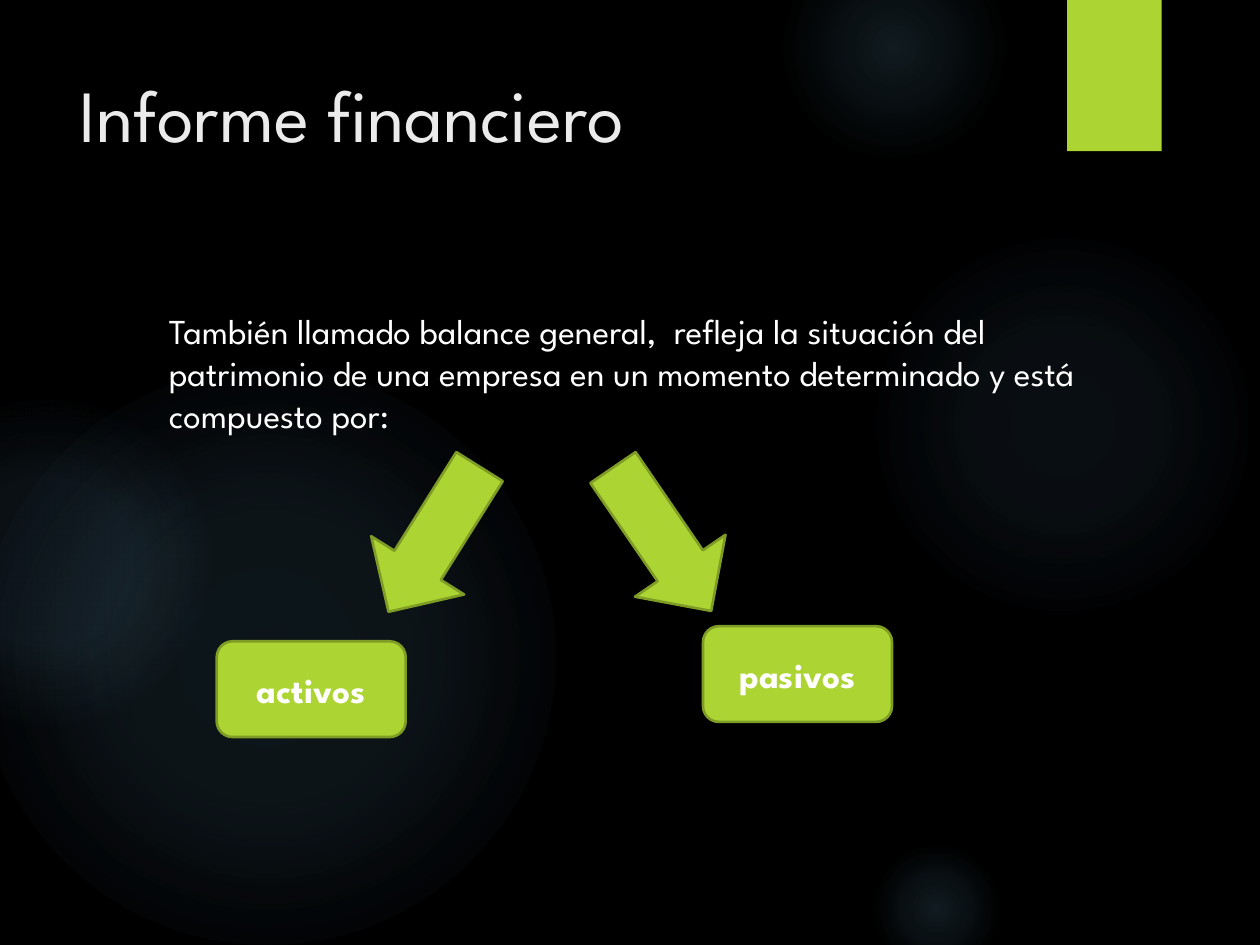
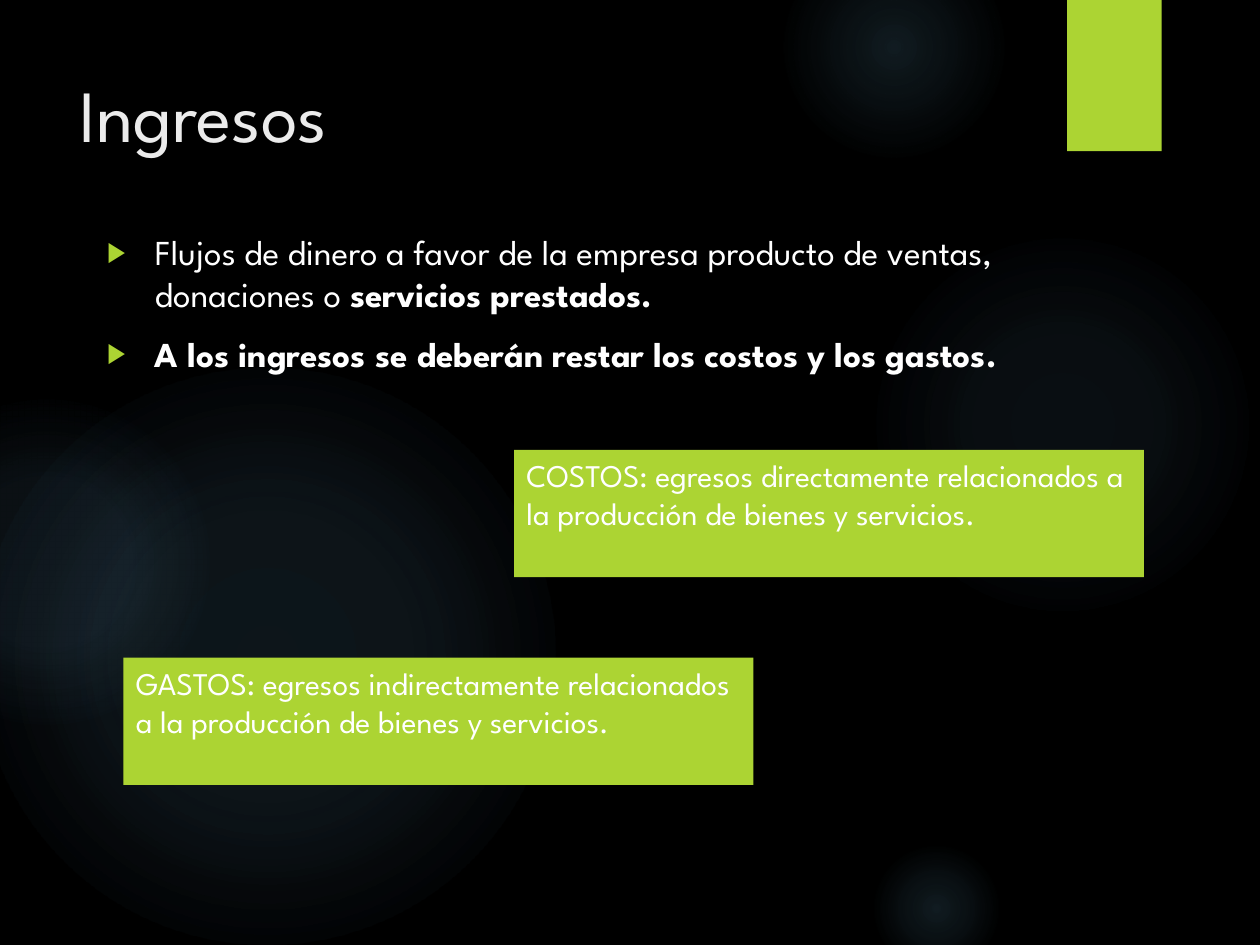
from lxml import etree
from pptx import Presentation
from pptx import util as u
from pptx.dml.color import RGBColor
from pptx.enum import shapes, text
from pptx.oxml import ns, parse_xml

FONT = "League Spartan"
BLACK, WHITE, TITLE_GREY = "000000", "FFFFFF", "EBEBEB"
LIME, DARK_LIME, GLOW_BLUE = "ACD433", "7F9D26", "7AC4F0"

# Glows: left, top, diameter, then (position, opacity) stops in percent
GLOWS = [
    (6.89, 1.83, 3.08, [(0, 7), (36, 6), (69, 0)]),
    (6.22, -0.5, 1.75, [(0, 14), (36, 7), (73, 0)]),
    (6.89, 6.67, 1.08, [(0, 14), (36, 7), (66, 0)]),
    (-0.17, 2.92, 4.58, [(0, 11), (36, 10), (75, 0)]),
    (-0.92, 3.17, 2.58, [(0, 8), (36, 8), (72, 0)]),
]


def color(value):
    return RGBColor.from_string(value)


def place(shape, box):
    shape.left, shape.top, shape.width, shape.height = map(u.Inches, box)


def add_child(parent, tag, **attributes):
    values = {name: str(value) for name, value in attributes.items()}
    return etree.SubElement(parent, ns.qn(tag), values)


def add_run(paragraph, words, size, ink=WHITE, bold=False):
    run = paragraph.add_run()
    run.text = words
    run.font.name, run.font.size, run.font.bold = FONT, u.Pt(size), bold
    run.font.color.rgb = color(ink)


def add_block(slide, kind, box, line=None):
    """Add a flat lime shape, outlined if a line colour is given."""
    shape = slide.shapes.add_shape(kind, *map(u.Inches, box))
    shape.shadow.inherit = False
    shape.fill.solid()
    shape.fill.fore_color.rgb = color(LIME)
    if line:
        shape.line.color.rgb = color(line)
        shape.line.width = u.Pt(1.5)
    else:
        shape.line.fill.background()
    return shape


# Shared backdrop
def glow_fill(shape, stops):
    shape.fill.background()
    gradient = parse_xml(f'<a:gradFill {ns.nsdecls("a")} rotWithShape="1"/>')
    stop_list = add_child(gradient, "a:gsLst")
    for position, opacity in stops:
        stop = add_child(stop_list, "a:gs", pos=position * 1000)
        tint = add_child(stop, "a:srgbClr", val=GLOW_BLUE)
        add_child(tint, "a:alpha", val=opacity * 1000)
    circle = add_child(gradient, "a:path", path="circle")
    add_child(circle, "a:fillToRect", l=50000, t=50000, r=50000, b=50000)
    properties = shape._element.spPr
    properties.replace(properties.find(ns.qn("a:noFill")), gradient)


def add_tab_shadow(tab):
    effects = tab._element.spPr.find(ns.qn("a:effectLst"))
    shadow = add_child(effects, "a:outerShdw", blurRad=u.Pt(3), dist=u.Pt(2),
                       dir=90 * 60000, rotWithShape=0)
    add_child(add_child(shadow, "a:srgbClr", val=BLACK), "a:alpha", val=45000)


def build_backdrop(master, slide):
    """Draw the glows and the tab on a slide, then move them to the master."""
    master.background.fill.solid()
    master.background.fill.fore_color.rgb = color(BLACK)
    decorations = []
    for left, top, diameter, stops in GLOWS:
        box = (left, top, diameter, diameter)
        glow = add_block(slide, shapes.MSO_SHAPE.OVAL, box)
        glow_fill(glow, stops)
        decorations.append(glow)
    tab = add_block(slide, shapes.MSO_SHAPE.RECTANGLE, (8.47, 0, 0.75, 1.2))
    add_tab_shadow(tab)
    decorations.append(tab)
    for index, shape in enumerate(decorations):
        element = shape._element
        element.nvSpPr.cNvPr.set("id", str(100 + index))
        master.shapes._spTree.insert(2 + index, element)


# Title and body placeholders
def prepare_frame(placeholder, box):
    place(placeholder, box)
    frame = placeholder.text_frame
    frame.auto_size = text.MSO_AUTO_SIZE.NONE
    frame.vertical_anchor = text.MSO_ANCHOR.TOP
    frame.word_wrap = True
    return frame


def add_title(slide, words):
    frame = prepare_frame(slide.shapes.title, (0.53, 0.5, 7.72, 1.53))
    paragraph = frame.paragraphs[0]
    paragraph.alignment = text.PP_ALIGN.LEFT
    add_run(paragraph, words, 42, TITLE_GREY)


def set_bullet(paragraph, bulleted):
    properties = paragraph._p.get_or_add_pPr()
    indent = u.Inches(0.38) if bulleted else 0
    properties.set("marL", str(indent))
    properties.set("indent", str(-indent))
    if bulleted:
        add_child(add_child(properties, "a:buClr"), "a:srgbClr", val=LIME)
        add_child(properties, "a:buSzPct", val=80000)
        add_child(properties, "a:buFont", typeface="Arial")
        add_child(properties, "a:buChar", char="▶")
    else:
        add_child(properties, "a:buNone")


def add_body(slide, box, items, bulleted):
    """Fill the body; each item is a list of (words, bold) runs."""
    frame = prepare_frame(slide.placeholders[1], box)
    for index, runs in enumerate(items):
        paragraph = frame.add_paragraph() if index else frame.paragraphs[0]
        paragraph.space_before = u.Pt(10)
        set_bullet(paragraph, bulleted)
        for words, bold in runs:
            add_run(paragraph, words, 20, bold=bold)


# Labelled boxes and arrows
def add_label(slide, kind, box, words, size, anchor, align, line=None, bold=False):
    shape = add_block(slide, kind, box, line)
    frame = shape.text_frame
    frame.word_wrap = True
    frame.vertical_anchor = anchor
    paragraph = frame.paragraphs[0]
    paragraph.alignment = align
    add_run(paragraph, words, size, bold=bold)


def add_branch(slide, arrow_box, rotation, left, top, words):
    arrow = add_block(slide, shapes.MSO_SHAPE.DOWN_ARROW, arrow_box, DARK_LIME)
    arrow.rotation = rotation
    add_label(slide, shapes.MSO_SHAPE.ROUNDED_RECTANGLE, (left, top, 1.5, 0.76),
              words, 20, text.MSO_ANCHOR.MIDDLE, text.PP_ALIGN.CENTER,
              DARK_LIME, True)


def add_definition(slide, left, top, words):
    add_label(slide, shapes.MSO_SHAPE.RECTANGLE, (left, top, 5, 1.01),
              words, 18, text.MSO_ANCHOR.TOP, text.PP_ALIGN.LEFT)


# Slides
def build_report(slide):
    add_title(slide, "Informe financiero")
    add_body(slide, (1.24, 2.41, 7.53, 1.5), [[(
        "También llamado balance general,  refleja la situación del patrimonio "
        "de una empresa en un momento determinado y está compuesto por:", False)]],
        bulleted=False)
    add_branch(slide, (3.01, 3.6, 0.87, 1.36), 32.1, 1.72, 5.09, "activos")
    add_branch(slide, (4.82, 3.59, 0.87, 1.38), 325.6, 5.58, 4.97, "pasivos")


def build_income(slide):
    add_title(slide, "Ingresos")
    add_body(slide, (0.75, 1.78, 8.11, 1.82), [
        [("Flujos de dinero a favor de la empresa producto de ventas, "
          "donaciones o ", False), ("servicios prestados.", True)],
        [("A los ingresos se deberán restar los costos y los gastos.", True)],
    ], bulleted=True)
    add_definition(slide, 4.08, 3.57, "COSTOS: egresos directamente relacionados "
                   "a la producción de bienes y servicios.")
    add_definition(slide, 0.98, 5.22, "GASTOS: egresos indirectamente relacionados "
                   "a la producción de bienes y servicios.")


def main():
    presentation = Presentation()
    presentation.slide_width, presentation.slide_height = u.Inches(10), u.Inches(7.5)
    layout = presentation.slide_layouts[1]
    report, income = (presentation.slides.add_slide(layout) for _ in range(2))
    build_backdrop(presentation.slide_master, report)
    build_report(report)
    build_income(income)
    presentation.save("out.pptx")


if __name__ == "__main__":
    main()
